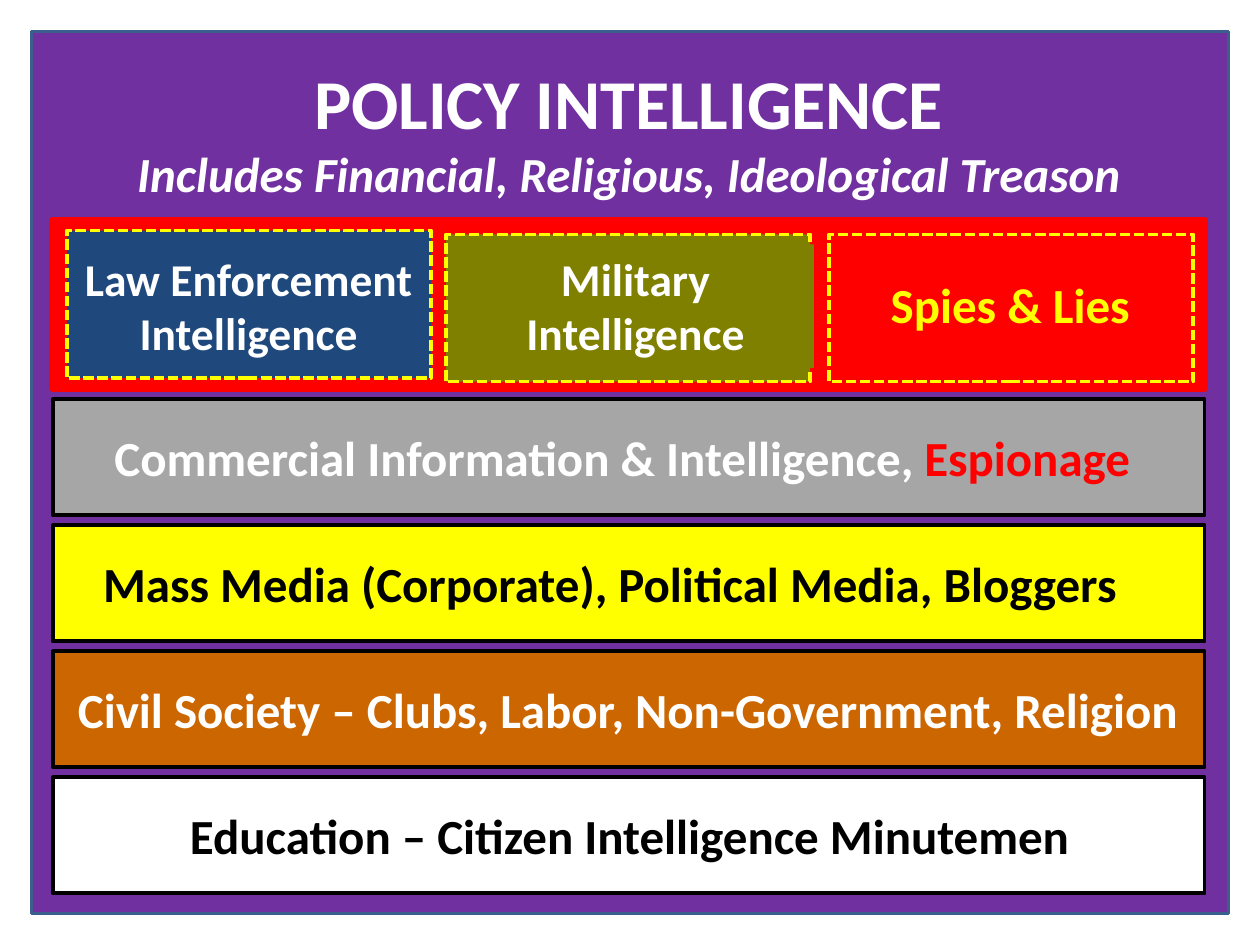
from dataclasses import dataclass

from pptx import Presentation
from pptx.dml.color import RGBColor
from pptx.enum.dml import MSO_LINE_DASH_STYLE as Dash
from pptx.enum.shapes import MSO_SHAPE as Shape
from pptx.enum.text import MSO_ANCHOR as Anchor, MSO_AUTO_SIZE as AutoSize, PP_ALIGN as Align
from pptx.util import Emu, Pt

PX = 9144  # 100 px to the inch
FONT = "Calibri"

WHITE = RGBColor(0xFF, 0xFF, 0xFF)
BLACK = RGBColor(0x00, 0x00, 0x00)
PURPLE = RGBColor(0x70, 0x30, 0xA0)
STEEL = RGBColor(0x3A, 0x5F, 0x8C)
RED = RGBColor(0xFF, 0x00, 0x00)
YELLOW = RGBColor(0xFF, 0xFF, 0x00)
GRAY = RGBColor(0xA6, 0xA6, 0xA6)
ORANGE = RGBColor(0xCC, 0x66, 0x00)
NAVY = RGBColor(0x1F, 0x49, 0x7D)
OLIVE = RGBColor(0x80, 0x80, 0x00)

BAR_X, BAR_W, BAR_H = 42, 914, 92
BAR_TOP, BAR_PITCH = 317, 100
CELL_W, CELL_H = 289, 117


@dataclass(frozen=True)
class Box:
    x: int
    y: int
    w: int
    h: int

    def emu(self) -> list[Emu]:
        return [Emu(v * PX) for v in (self.x, self.y, self.w, self.h)]


@dataclass(frozen=True)
class Bar:
    fill: RGBColor
    text_x: int
    text_w: int
    runs: tuple[tuple[str, RGBColor], ...]


@dataclass(frozen=True)
class Cell:
    x: int
    y: int
    fill: RGBColor
    label: Box
    text: str
    size: int
    color: RGBColor
    wrap: bool = True
    label_fill: RGBColor | None = None


BARS = (
    Bar(GRAY, 81, 836, (("Commercial Information & Intelligence,", WHITE), (" Espionage", RED))),
    Bar(YELLOW, 72, 853, (("Mass Media (Corporate), Political Media, Bloggers", BLACK),)),
    Bar(ORANGE, 52, 903, (("Civil Society – Clubs, Labor, Non-Government, Religion", WHITE),)),
    Bar(WHITE, 141, 727, (("Education – Citizen Intelligence Minutemen", BLACK),)),
)

CELLS = (
    Cell(53, 183, NAVY, Box(56, 194, 283, 98), "Law Enforcement Intelligence", 26, WHITE),
    Cell(354, 186, OLIVE, Box(363, 194, 283, 98), "Military Intelligence", 26, WHITE,
         label_fill=OLIVE),
    Cell(658, 186, RED, Box(697, 213, 212, 57), "Spies & Lies", 28, YELLOW, wrap=False),
)


def add_rect(s, box: Box, fill: RGBColor, line: RGBColor, width: float, dash=None):
    sp = s.shapes.add_shape(Shape.RECTANGLE, *box.emu())
    sp.shadow.inherit = False
    sp.fill.solid()
    sp.fill.fore_color.rgb = fill
    sp.line.color.rgb = line
    sp.line.width = Pt(width)
    if dash is not None:
        sp.line.dash_style = dash
    return sp


def set_font(p, size: int, italic: bool = False) -> None:
    p.font.name = FONT
    p.font.size = Pt(size)
    p.font.bold = True
    p.font.italic = italic


def add_label(s, box: Box, runs: tuple[tuple[str, RGBColor], ...], size: int, wrap: bool = False):
    sp = s.shapes.add_textbox(*box.emu())
    tf = sp.text_frame
    tf.word_wrap = wrap
    tf.auto_size = AutoSize.SHAPE_TO_FIT_TEXT
    p = tf.paragraphs[0]
    p.alignment = Align.CENTER if wrap else Align.LEFT
    set_font(p, size)
    for text, color in runs:
        r = p.add_run()
        r.text = text
        r.font.color.rgb = color
    return sp


def add_title(s) -> None:
    title = s.shapes.title
    title.left, title.top, title.width, title.height = Box(BAR_X, 42, BAR_W, 125).emu()
    tf = title.text_frame
    tf.text = "POLICY INTELLIGENCE\nIncludes Financial, Religious, Ideological Treason"
    tf.word_wrap = True
    tf.auto_size = AutoSize.SHAPE_TO_FIT_TEXT
    tf.vertical_anchor = Anchor.TOP
    for p, size, italic in zip(tf.paragraphs, (40, 28), (False, True)):
        p.alignment = Align.CENTER
        set_font(p, size, italic)
        p.font.color.rgb = WHITE


def add_bar(s, bar: Bar, top: int) -> None:
    add_rect(s, Box(BAR_X, top, BAR_W, BAR_H), bar.fill, BLACK, 2.25)
    add_label(s, Box(bar.text_x, top + 17, bar.text_w, 57), bar.runs, 28)


def add_cell(s, cell: Cell) -> None:
    add_rect(s, Box(cell.x, cell.y, CELL_W, CELL_H), cell.fill, YELLOW, 2, Dash.SQUARE_DOT)
    sp = add_label(s, cell.label, ((cell.text, cell.color),), cell.size, cell.wrap)
    if cell.label_fill is not None:
        sp.fill.solid()
        sp.fill.fore_color.rgb = cell.label_fill


def main() -> None:
    prs = Presentation()
    prs.slide_width, prs.slide_height = Emu(1000 * PX), Emu(750 * PX)
    s = prs.slides.add_slide(prs.slide_layouts[5])

    # Purple panel, placed behind the title
    panel = add_rect(s, Box(25, 25, 950, 700), PURPLE, STEEL, 2)
    s.shapes.title.element.addprevious(panel.element)
    add_title(s)

    # Stacked bars
    for i, bar in enumerate(BARS):
        add_bar(s, bar, BAR_TOP + i * BAR_PITCH)

    # Red band with its three dashed cells
    add_rect(s, Box(BAR_X, 175, BAR_W, 133), RED, RED, 4.5)
    for cell in CELLS:
        add_cell(s, cell)

    prs.save("out.pptx")


if __name__ == "__main__":
    main()
